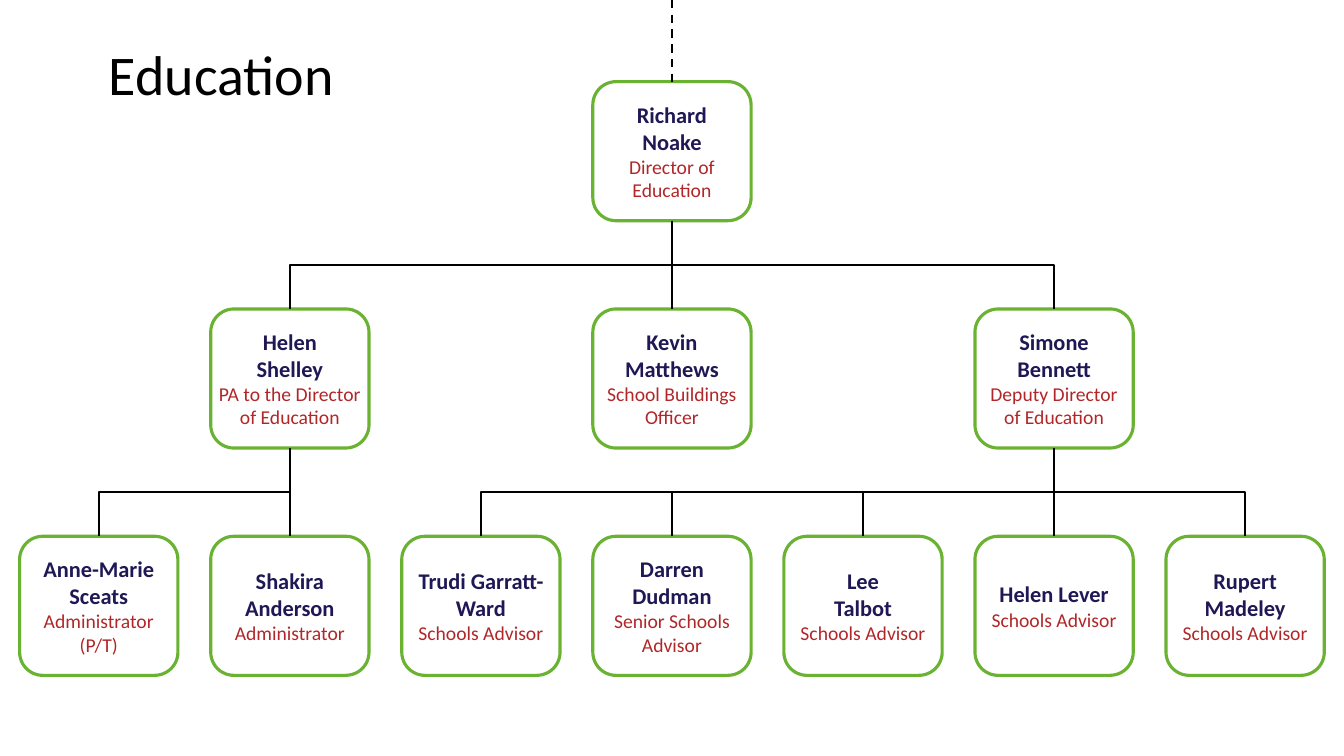
from dataclasses import dataclass

from lxml.etree import SubElement
from pptx import Presentation
from pptx.dml.color import RGBColor
from pptx.enum.dml import MSO_LINE
from pptx.enum.shapes import MSO_CONNECTOR, MSO_SHAPE
from pptx.enum.text import MSO_ANCHOR, MSO_AUTO_SIZE, PP_ALIGN
from pptx.oxml.ns import qn
from pptx.shapes.connector import Connector
from pptx.slide import Slide
from pptx.text.text import TextFrame
from pptx.util import Inches, Pt

BLACK = RGBColor(0x00, 0x00, 0x00)
GREEN = RGBColor(0x6A, 0xB2, 0x32)
NAVY = RGBColor(0x1F, 0x18, 0x55)
RED = RGBColor(0xB1, 0x27, 0x29)
FONT = "Calibri"

BOX_WIDTH, BOX_HEIGHT = 1.57, 1.38
FIRST_CENTRE, COLUMN_PITCH = 0.98, (12.35 - 0.98) / 6
FIRST_TOP, ROW_PITCH = 0.81, (5.32 - 0.81) / 2


@dataclass(frozen=True)
class Post:
    name_lines: tuple[str, ...]
    role: str
    column: int
    row: int
    reports: tuple["Post", ...] = ()

    @property
    def centre(self) -> float:
        return FIRST_CENTRE + self.column * COLUMN_PITCH

    @property
    def top(self) -> float:
        return FIRST_TOP + self.row * ROW_PITCH

    @property
    def bottom(self) -> float:
        return self.top + BOX_HEIGHT


PA = Post(("Helen", "Shelley"), "PA to the Director of Education", 1, 1, (
    Post(("Anne-Marie", "Sceats"), "Administrator (P/T)", 0, 2),
    Post(("Shakira Anderson",), "Administrator", 1, 2),
))
BUILDINGS_OFFICER = Post(("Kevin", "Matthews"), "School Buildings Officer", 3, 1)
DEPUTY = Post(("Simone", "Bennett"), "Deputy Director of Education", 5, 1, (
    Post(("Trudi Garratt-Ward",), "Schools Advisor", 2, 2),
    Post(("Darren", "Dudman"), "Senior Schools Advisor", 3, 2),
    Post(("Lee", "Talbot"), "Schools Advisor", 4, 2),
    Post(("Helen Lever",), "Schools Advisor", 5, 2),
    Post(("Rupert", "Madeley"), "Schools Advisor", 6, 2),
))
DIRECTOR = Post(("Richard", "Noake"), "Director of Education", 3, 0,
                (PA, BUILDINGS_OFFICER, DEPUTY))


def write_line(frame: TextFrame, index: int, text: str, size: int,
               color: RGBColor, bold: bool = False) -> None:
    paragraph = frame.add_paragraph() if index else frame.paragraphs[0]
    paragraph.alignment = PP_ALIGN.CENTER
    run = paragraph.add_run()
    run.text = text
    run.font.name = FONT
    run.font.size = Pt(size)
    run.font.bold = bold
    run.font.color.rgb = color


def draw_line(slide: Slide, kind: MSO_CONNECTOR, x1: float, y1: float,
              x2: float, y2: float) -> Connector:
    line = slide.shapes.add_connector(
        kind, Inches(x1), Inches(y1), Inches(x2), Inches(y2))
    line.line.color.rgb = BLACK
    line.line.width = Pt(1.5)
    SubElement(line.element.spPr, qn("a:effectLst"))
    return line


def draw_reporting_line(slide: Slide, manager: Post, report: Post) -> None:
    if manager.column == report.column:
        draw_line(slide, MSO_CONNECTOR.STRAIGHT, manager.centre, manager.bottom,
                  report.centre, report.top)
        return
    goes_left = report.column < manager.column
    middle_x = (manager.centre + report.centre) / 2
    middle_y = (manager.bottom + report.top) / 2
    half_drop = (report.top - manager.bottom) / 2
    half_reach = abs(manager.centre - report.centre) / 2
    offset = half_drop if goes_left else -half_drop
    elbow = draw_line(slide, MSO_CONNECTOR.ELBOW,
                      middle_x - offset, middle_y - half_reach,
                      middle_x + offset, middle_y + half_reach)
    degrees = 90 if goes_left else 270
    elbow.element.spPr.find(qn("a:xfrm")).set("rot", str(degrees * 60000))


def draw_post(slide: Slide, post: Post) -> None:
    box = slide.shapes.add_shape(
        MSO_SHAPE.FLOWCHART_ALTERNATE_PROCESS,
        Inches(post.centre - BOX_WIDTH / 2), Inches(post.top),
        Inches(BOX_WIDTH), Inches(BOX_HEIGHT))
    box.shadow.inherit = False
    box.fill.background()
    box.line.color.rgb = GREEN
    box.line.width = Pt(2.25)
    frame = box.text_frame
    frame.word_wrap = True
    frame.vertical_anchor = MSO_ANCHOR.MIDDLE
    frame.margin_left = frame.margin_right = Inches(0)
    frame.margin_top = frame.margin_bottom = Inches(0)
    for index, name in enumerate(post.name_lines):
        write_line(frame, index, name, 16, NAVY, bold=True)
    write_line(frame, len(post.name_lines), post.role, 14, RED)


def draw_team(slide: Slide, manager: Post) -> None:
    draw_post(slide, manager)
    for report in manager.reports:
        draw_team(slide, report)
        draw_reporting_line(slide, manager, report)


def draw_title(slide: Slide) -> None:
    title = slide.shapes.add_textbox(
        Inches(0.02), Inches(0.34), Inches(4.35), Inches(0.77))
    title.text_frame.word_wrap = True
    title.text_frame.auto_size = MSO_AUTO_SIZE.SHAPE_TO_FIT_TEXT
    write_line(title.text_frame, 0, "Education", 40, BLACK)


def main() -> None:
    presentation = Presentation()
    presentation.slide_width = Inches(13.33)
    presentation.slide_height = Inches(7.5)
    slide = presentation.slides.add_slide(presentation.slide_layouts[6])
    draw_title(slide)
    draw_team(slide, DIRECTOR)
    link_upwards = draw_line(slide, MSO_CONNECTOR.STRAIGHT, DIRECTOR.centre, 0,
                             DIRECTOR.centre, DIRECTOR.top)
    link_upwards.line.dash_style = MSO_LINE.DASH
    presentation.save("out.pptx")


if __name__ == "__main__":
    main()
